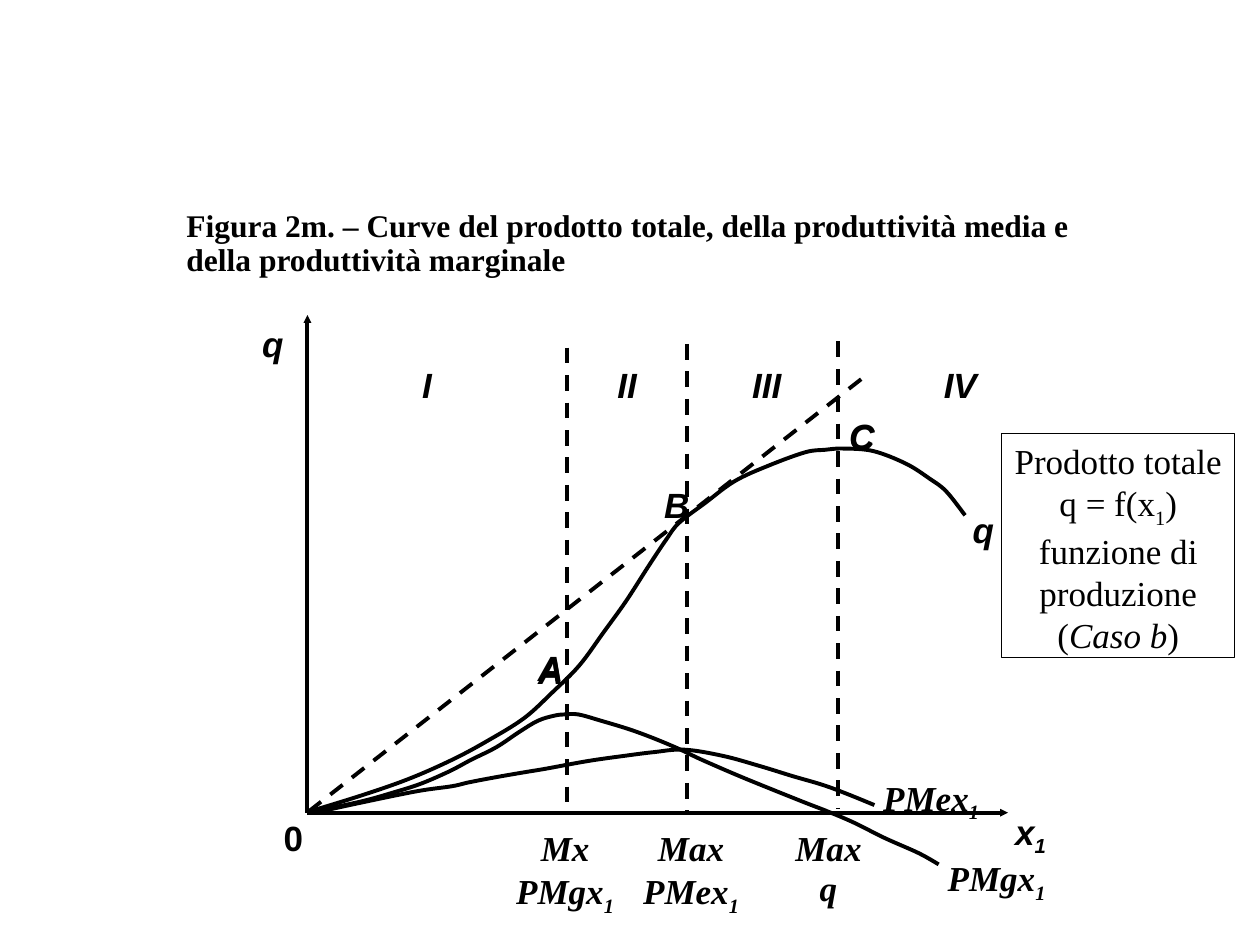
from lxml.etree import Element, SubElement
from pptx import Presentation
from pptx.dml.color import RGBColor
from pptx.enum.dml import MSO_LINE as Dash
from pptx.enum.shapes import MSO_CONNECTOR as Link, MSO_SHAPE as Form
from pptx.enum.text import MSO_ANCHOR as Anchor, MSO_AUTO_SIZE as Fit, PP_ALIGN as Align
from pptx.oxml.ns import qn
from pptx.util import Inches, Pt

INK = "000000"
SERIF, SANS = "Times New Roman", "Arial"

deck = Presentation()
deck.slide_width, deck.slide_height = Inches(10), Inches(7.5)
slide = deck.slides.add_slide(deck.slide_layouts[5])
shapes = slide.shapes
cell = deck.slide_width / 100  # grid of 100 columns by 75 rows


def write(shape, rows, face, bold=True, slant=True, align=Align.LEFT, lead=0.96, size=20):
    """Fill a shape; _ starts a subscript digit, * toggles italics, | breaks the line."""
    frame = shape.text_frame
    for i, row in enumerate(rows):
        para = frame.paragraphs[0] if i == 0 else frame.add_paragraph()
        para.alignment, para.line_spacing = align, lead
        for j, part in enumerate(row.split("*")):
            head, _, tail = part.partition("_")
            for text, sub in ((head, False), (tail[:1], True), (tail[1:], False)):
                for k, bit in enumerate(text.split("|")):
                    if k:
                        para.add_line_break()
                    if not bit:
                        continue
                    run = para.add_run()
                    run.text = bit
                    font = run.font
                    font.name, font.size = face, Pt(size)
                    font.bold, font.italic = bold, slant != bool(j % 2)
                    font.color.rgb = RGBColor.from_string(INK)
                    if sub:
                        font._element.set("baseline", "-25000")


def draw(x1, y1, x2, y2, dash=False, arrow=False):
    """Straight line between two grid points."""
    link = shapes.add_connector(Link.STRAIGHT, *(round(v * cell) for v in (x1, y1, x2, y2)))
    link.line.width = Pt(2.25)
    link.line.color.rgb = RGBColor.from_string(INK)
    if dash:
        link.line.dash_style = Dash.DASH
    if arrow:
        SubElement(link.line._get_or_add_ln(), qn("a:tailEnd"),
                   type="triangle", w="sm", len="sm")
    SubElement(link._element.spPr, qn("a:effectLst"))


# Title
title = shapes.title
title.left, title.top, title.width, title.height = (
    round(v * cell) for v in (13.8, 17, 76.4, 4.7))
title.text_frame.auto_size = Fit.NONE
title.text_frame.vertical_anchor = Anchor.MIDDLE
write(title, ["Figura 2m. – Curve del prodotto totale, della produttività media e "
              "della produttività marginale"], SERIF, slant=False, lead=0.9, size=18)

# Stage borders and the tangent from the origin
for x, top, foot in ((45, 27.6, 64.7), (54.5, 27.3, 64.4), (66.5, 27.1, 64.2)):
    draw(x, top, x, foot, dash=True)
draw(24.5, 64.4, 68.6, 29.9, dash=True)

# Curves: knots joined by Bézier arcs
total = [(24.6, 64.4), (28.8, 63.1), (32.5, 61.8), (35.9, 60.3), (38.7, 58.8), (41.6, 57),
         (43.9, 54.9), (46, 52.8), (47.9, 50.2), (49.7, 47.7), (51.5, 44.9), (52.9, 42.8),
         (53.9, 41.5), (56, 39.9), (58.3, 38.2), (60.9, 37), (63.9, 35.9), (65.5, 35.7),
         (66.9, 35.6), (69.3, 35.8), (71.9, 36.8), (73.8, 38), (75.1, 39), (76.6, 40.9)]
margin = [(24.9, 64.4), (28.7, 63.6), (31.2, 62.9), (33.4, 62.2), (35.7, 61.2), (37.4, 60.3),
          (39.4, 59.3), (41.2, 58.1), (42.7, 57.2), (44, 56.8), (44.8, 56.7), (45.9, 56.7),
          (47.7, 57.2), (50, 57.9), (51.9, 58.6), (53.8, 59.4), (55.7, 60.3), (58.7, 61.6),
          (61.4, 62.7), (63.9, 63.7), (65.7, 64.4), (67.8, 65.3), (70.2, 66.5), (72.9, 67.7),
          (74.5, 68.6)]
mean = [(25, 64.5), (28.7, 63.7), (33.1, 62.8), (35.9, 62.4), (37.2, 62.1), (39.3, 61.7),
        (41.6, 61.3), (43.4, 61), (46.7, 60.4), (49.5, 60), (51.9, 59.7), (54.3, 59.5),
        (57.4, 60), (60.3, 60.8), (62.9, 61.6), (65.3, 62.3), (67.2, 63), (69.4, 63.9)]
for knots in (total, margin, mean):
    dots = [(round(x * cell), round(y * cell)) for x, y in knots]
    pen = shapes.build_freeform(*dots[0])
    pen.add_line_segments(dots[1:], close=False)
    curve = pen.convert_to_shape()
    curve.shadow.inherit = False
    curve.fill.background()
    curve.line.width = Pt(2.25)
    curve.line.color.rgb = RGBColor.from_string(INK)
    # Each straight segment gets two control points along its neighbours' chords
    spots = [(int(p.get("x")), int(p.get("y"))) for p in curve._element.iter(qn("a:pt"))]
    ends = [spots[0], *spots, spots[-1]]
    arcs = list(curve._element.iter(qn("a:lnTo")))
    for arc, a, b, c, d in zip(arcs, ends, ends[1:], ends[2:], ends[3:]):
        arc.tag = qn("a:cubicBezTo")
        for n, (base, far, near) in enumerate(((b, c, a), (c, b, d))):
            x, y = (round(o + (f - e) / 6) for o, f, e in zip(base, far, near))
            arc.insert(n, Element(qn("a:pt"), x=str(x), y=str(y)))

# Axes
draw(24.4, 64.5, 80, 64.5, arrow=True)
draw(24.4, 64.5, 24.4, 25, arrow=True)

# Labels: left, top, width, height, rows, face, centred, margins
labels = [
    (33.5, 29.1, 1.9, 2.6, ["I"], SANS, False, False),
    (49, 29.1, 1.9, 2.6, ["II"], SANS, False, False),
    (59.7, 29.1, 4.2, 2.6, ["III"], SANS, False, False),
    (74.9, 29.1, 4.1, 2.6, ["IV"], SANS, False, False),
    (42.7, 51.8, 2.2, 2.6, ["A"], SANS, False, False),
    (52.7, 38.6, 2.2, 2.7, ["B"], SANS, False, False),
    (67.4, 33.2, 2.2, 2.6, ["C"], SANS, False, False),
    (41.7, 50.8, 3.9, 3.8, ["A"], SANS, False, True),
    (66.4, 32.4, 4.7, 3.8, ["C"], SANS, False, True),
    (77.2, 40.6, 2.2, 2.7, ["q"], SANS, False, False),
    (20.8, 25.8, 2.7, 3, ["q"], SANS, False, False),
    (22.5, 65, 2.5, 2.8, ["*0"], SANS, False, False),
    (79.8, 64.3, 4, 3, ["x_1"], SANS, True, False),
    (40.8, 65.8, 8.1, 5.4, ["Mx", "PMgx_1"], SERIF, True, False),
    (50.8, 65.8, 8.1, 5.4, ["Max", "PMex_1"], SERIF, True, False),
    (61.7, 65.8, 8.1, 5.5, ["Max", "q"], SERIF, True, False),
    (75.1, 68, 8, 3.1, ["PMgx_1"], SERIF, True, False),
    (70, 61.6, 7.8, 2.7, ["PMex_1"], SERIF, True, False),
]
for *box, rows, face, mid, pad in labels:
    label = shapes.add_textbox(*(round(v * cell) for v in box))
    frame = label.text_frame
    frame.word_wrap = True
    if not pad:
        frame.margin_left = frame.margin_right = frame.margin_top = frame.margin_bottom = 0
    write(label, rows, face, align=Align.CENTER if mid else Align.LEFT,
          lead=1 if pad else 0.96)

# Note on the production function
note = shapes.add_shape(Form.RECTANGLE, *(round(v * cell) for v in (79.5, 34.4, 18.5, 17.8)))
note.shadow.inherit = False
note.fill.background()
note.line.width = Pt(0.75)
note.line.color.rgb = RGBColor.from_string(INK)
note.text_frame.word_wrap = True
note.text_frame.vertical_anchor = Anchor.TOP
write(note, ["Prodotto totale", "q = f(x_1)", "funzione di produzione|(*Caso b*)"],
      SERIF, bold=False, slant=False, align=Align.CENTER, lead=1)

deck.save("out.pptx")
